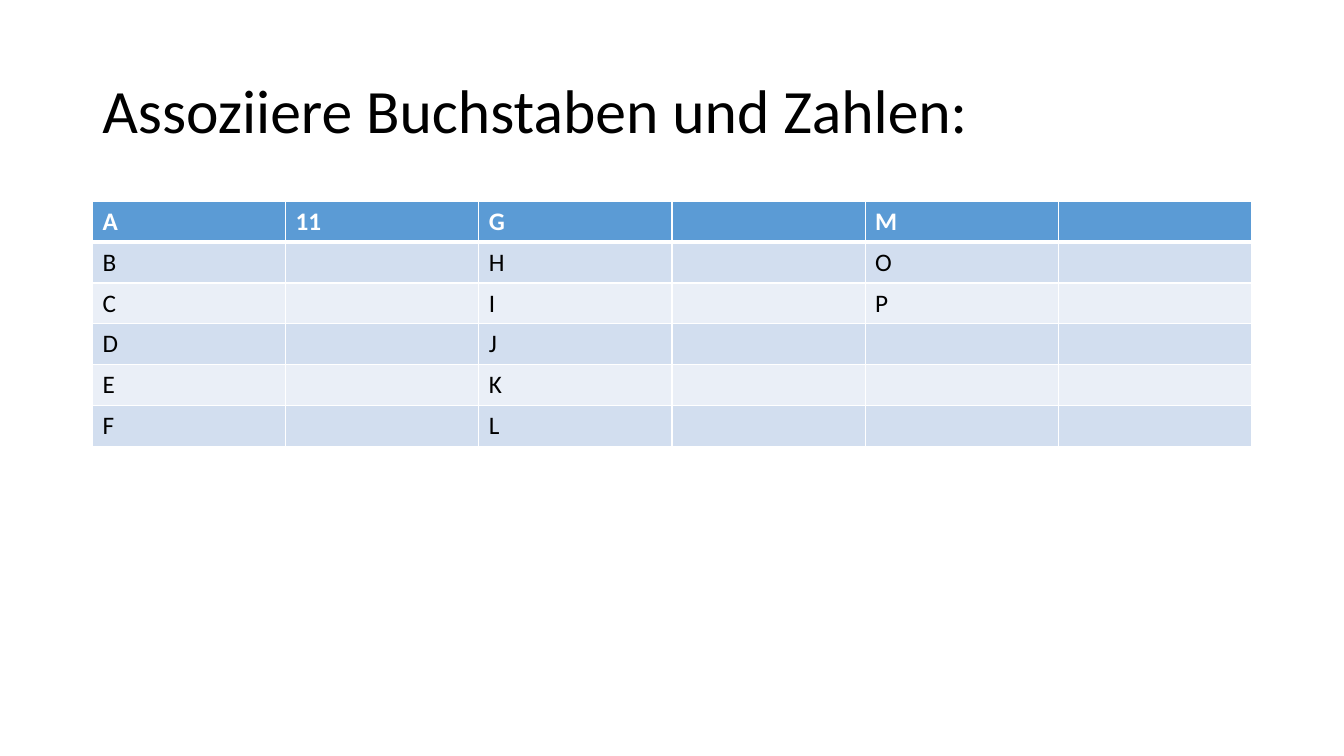
from lxml import etree
from pptx import Presentation
from pptx.dml.color import RGBColor
from pptx.enum.text import MSO_ANCHOR
from pptx.oxml.ns import qn
from pptx.util import Cm, Pt

MIDDLE = MSO_ANCHOR.MIDDLE
INK = {"head": "5B9BD5", "dark": "D2DEEF", "light": "EAEFF7",
       "white": "FFFFFF", "black": "000000"}
ROWS = [
    ["A", "11", "G", "", "M", ""],
    ["B", "", "H", "", "O", ""],
    ["C", "", "I", "", "P", ""],
    ["D", "", "J", "", "", ""],
    ["E", "", "K", "", "", ""],
    ["F", "", "L", "", "", ""],
]


def write(para, text, color, **form):
    run = para.add_run()
    run.text = text
    run.font.color.rgb = RGBColor.from_string(INK[color])
    for key, value in {"name": "Calibri", **form}.items():
        setattr(run.font, key, value)


def edge(cell, side, width):
    line = etree.SubElement(cell._tc.get_or_add_tcPr(), qn("a:" + side), w=str(Pt(width)))
    fill = etree.SubElement(line, qn("a:solidFill"))
    etree.SubElement(fill, qn("a:srgbClr"), val=INK["white"])


deck = Presentation()
deck.slide_width, deck.slide_height = Cm(33.87), Cm(19.05)
slide = deck.slides.add_slide(deck.slide_layouts[6])

title = slide.shapes.add_textbox(Cm(2.33), Cm(1.01), Cm(29.21), Cm(3.68)).text_frame
for key, value in {"word_wrap": True, "vertical_anchor": MIDDLE}.items():
    setattr(title, key, value)
title.paragraphs[0].line_spacing = 0.9
write(title.paragraphs[0], "Assoziiere Buchstaben und Zahlen:", "black", size=Pt(44))

table = slide.shapes.add_table(len(ROWS), len(ROWS[0]), Cm(2.33), Cm(5.07),
                               Cm(29.21), Cm(6.18)).table
for key, value in {"first_row": True, "horz_banding": True}.items():
    setattr(table, key, value)

for i, row in enumerate(ROWS):
    head = i == 0
    tone = "head" if head else "dark" if i % 2 else "light"
    for j, text in enumerate(row):
        cell = table.cell(i, j)
        for side in ("lnL", "lnR", "lnT", "lnB"):
            thick = side == "lnB" and head or side == "lnT" and i == 1
            edge(cell, side, 3 if thick else 1)
        cell.fill.solid()
        cell.fill.fore_color.rgb = RGBColor.from_string(INK[tone])
        if text:
            write(cell.text_frame.paragraphs[0], text, "white" if head else "black",
                  size=Pt(18), bold=head)

deck.save("out.pptx")
